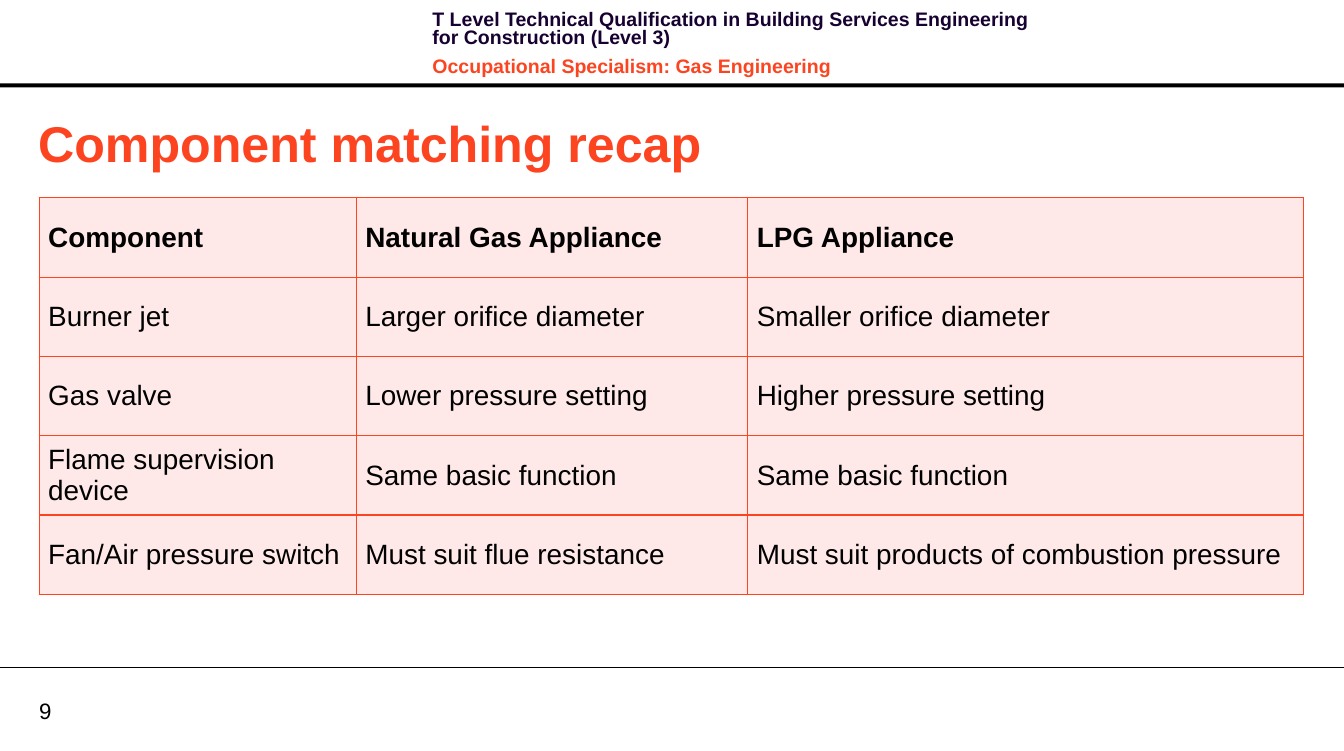
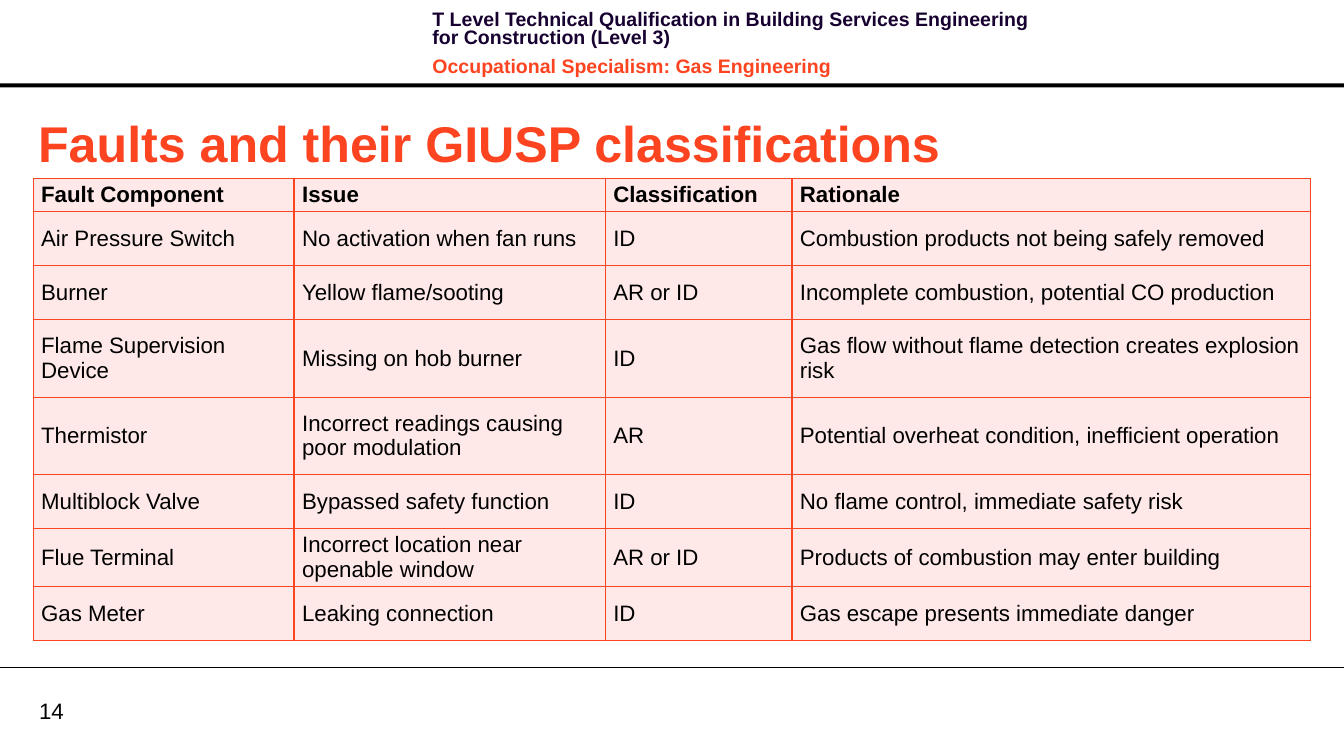
from lxml import etree
from pptx import Presentation
from pptx.dml.color import RGBColor
from pptx.enum.shapes import MSO_CONNECTOR, MSO_SHAPE
from pptx.enum.text import MSO_ANCHOR, MSO_AUTO_SIZE, PP_ALIGN
from pptx.oxml.ns import qn
from pptx.util import Inches, Pt

MIDDLE, TOP = MSO_ANCHOR.MIDDLE, MSO_ANCHOR.TOP
LEFT = PP_ALIGN.LEFT
NO_AUTOFIT = MSO_AUTO_SIZE.NONE
STRAIGHT = MSO_CONNECTOR.STRAIGHT
RECTANGLE = MSO_SHAPE.RECTANGLE

SLIDE_W, SLIDE_H = 13.39, 7.48
FONT = "Arial"
TITLE_ONLY = 5
COLORS = {
    "accent": "FC4421",
    "navy": "170130",
    "black": "000000",
    "cell": "FEE9E8",
}
QUALIFICATION = ("T Level Technical Qualification in Building Services "
                 "Engineering for Construction (Level 3)")
SPECIALISM = "Occupational Specialism: Gas Engineering"

COMPONENT_ROWS = [
    ("Component", "Natural Gas Appliance", "LPG Appliance"),
    ("Burner jet", "Larger orifice diameter", "Smaller orifice diameter"),
    ("Gas valve", "Lower pressure setting", "Higher pressure setting"),
    ("Flame supervision device", "Same basic function", "Same basic function"),
    ("Fan/Air pressure switch", "Must suit flue resistance",
     "Must suit products of combustion pressure"),
]
FAULT_ROWS = [
    ("Fault Component", "Issue", "Classification", "Rationale"),
    ("Air Pressure Switch", "No activation when fan runs", "ID",
     "Combustion products not being safely removed"),
    ("Burner", "Yellow flame/sooting", "AR or ID",
     "Incomplete combustion, potential CO production"),
    ("Flame Supervision Device", "Missing on hob burner", "ID",
     "Gas flow without flame detection creates explosion risk"),
    ("Thermistor", "Incorrect readings causing poor modulation", "AR",
     "Potential overheat condition, inefficient operation"),
    ("Multiblock Valve", "Bypassed safety function", "ID",
     "No flame control, immediate safety risk"),
    ("Flue Terminal", "Incorrect location near openable window", "AR or ID",
     "Products of combustion may enter building"),
    ("Gas Meter", "Leaking connection", "ID",
     "Gas escape presents immediate danger"),
]


def rgb(name):
    return RGBColor.from_string(COLORS[name])


def write(paragraph, text, size, color="black", bold=False, line=None,
          before=None, after=None):
    paragraph.text = text
    paragraph.alignment = LEFT
    if line is not None:
        paragraph.line_spacing = Pt(line)
    if before is not None:
        paragraph.space_before = Pt(before)
    if after is not None:
        paragraph.space_after = Pt(after)
    font = paragraph.runs[0].font
    font.name, font.size, font.bold = FONT, Pt(size), bold
    font.color.rgb = rgb(color)


def set_frame(frame, anchor, inset_x, inset_y):
    frame.word_wrap = True
    frame.auto_size = NO_AUTOFIT
    frame.vertical_anchor = anchor
    frame.margin_left = frame.margin_right = Inches(inset_x)
    frame.margin_top = frame.margin_bottom = Inches(inset_y)


def add_text_frame(slide, box, anchor, inset_x=0, inset_y=0):
    frame = slide.shapes.add_textbox(*map(Inches, box)).text_frame
    set_frame(frame, anchor, inset_x, inset_y)
    return frame


def add_header(slide, left, top, width, height):
    """Course name near the middle, with a thick rule along the bottom."""
    rule_h = 0.04
    rule = slide.shapes.add_shape(
        RECTANGLE, Inches(left), Inches(top + height - rule_h),
        Inches(width), Inches(rule_h))
    rule.shadow.inherit = False
    rule.fill.solid()
    rule.fill.fore_color.rgb = rgb("black")
    rule.line.fill.background()

    frame = add_text_frame(slide, (left + 4.21, top + 0.07, 6.37, 0.64),
                           TOP, 0.1, 0.05)
    write(frame.paragraphs[0], QUALIFICATION, 14, "navy", True,
          line=13.1, after=4)
    write(frame.add_paragraph(), SPECIALISM, 14, "accent", True,
          line=13.1, before=4, after=4)


def add_footer(slide, left, top, width, number):
    """Thin rule with the page number below it."""
    rule = slide.shapes.add_connector(
        STRAIGHT, Inches(left), Inches(top), Inches(left + width), Inches(top))
    rule.line.color.rgb = rgb("black")
    rule.line.width = Pt(0.75)
    etree.SubElement(rule.line._get_or_add_ln().getparent(), qn("a:effectLst"))

    frame = add_text_frame(slide, (left + 0.39, top + 0.29, 0.64, 0.27), MIDDLE)
    write(frame.paragraphs[0], str(number), 16)


def set_title(slide, text, left, top, width, height):
    title = slide.shapes.title
    title.left, title.top = Inches(left), Inches(top)
    title.width, title.height = Inches(width), Inches(height)
    set_frame(title.text_frame, MIDDLE, 0.1, 0.05)
    write(title.text_frame.paragraphs[0], text, 36, "accent", True)


def outline_cell(cell, color, width):
    properties = cell._tc.get_or_add_tcPr()
    for side in ("lnL", "lnR", "lnT", "lnB"):
        border = etree.SubElement(properties, qn(f"a:{side}"), w=str(Pt(width)))
        fill = etree.SubElement(border, qn("a:solidFill"))
        etree.SubElement(fill, qn("a:srgbClr"), val=COLORS[color])


def add_grid(slide, rows, left, top, col_widths, row_heights, size,
             inset_x, inset_y):
    """Tinted table with a bold first row and accent borders."""
    table = slide.shapes.add_table(
        len(rows), len(col_widths), Inches(left), Inches(top),
        Inches(sum(col_widths)), Inches(sum(row_heights))).table
    table.horz_banding = False
    for column, width in zip(table.columns, col_widths):
        column.width = Inches(width)
    for r, (texts, height) in enumerate(zip(rows, row_heights)):
        table.rows[r].height = Inches(height)
        for c, text in enumerate(texts):
            cell = table.cell(r, c)
            cell.vertical_anchor = MIDDLE
            cell.margin_left = cell.margin_right = Inches(inset_x)
            cell.margin_top = cell.margin_bottom = Inches(inset_y)
            outline_cell(cell, "accent", 1)
            cell.fill.solid()
            cell.fill.fore_color.rgb = rgb("cell")
            write(cell.text_frame.paragraphs[0], text, size, bold=r == 0)


def add_table_slide(deck, title, number, **grid):
    slide = deck.slides.add_slide(deck.slide_layouts[TITLE_ONLY])
    add_header(slide, 0, 0, SLIDE_W, 0.87)
    add_footer(slide, 0, 6.65, SLIDE_W, number)
    set_title(slide, title, 0.28, 1.06, 12.72, 0.71)
    add_grid(slide, **grid)


def main():
    deck = Presentation()
    deck.slide_width, deck.slide_height = Inches(SLIDE_W), Inches(SLIDE_H)
    add_table_slide(
        deck, "Component matching recap", 9, rows=COMPONENT_ROWS,
        left=0.39, top=1.97, col_widths=[3.16, 3.9, 5.54],
        row_heights=[0.79] * len(COMPONENT_ROWS),
        size=20, inset_x=0.09, inset_y=0.05)
    add_table_slide(
        deck, "Faults and their GIUSP classifications", 14, rows=FAULT_ROWS,
        left=0.33, top=1.78, col_widths=[2.6, 3.1, 1.86, 5.17],
        row_heights=[0.31] + [0.54] * 2 + [0.77] * 2 + [0.54] * 3,
        size=16, inset_x=0.08, inset_y=0.04)
    deck.save("out.pptx")


if __name__ == "__main__":
    main()
